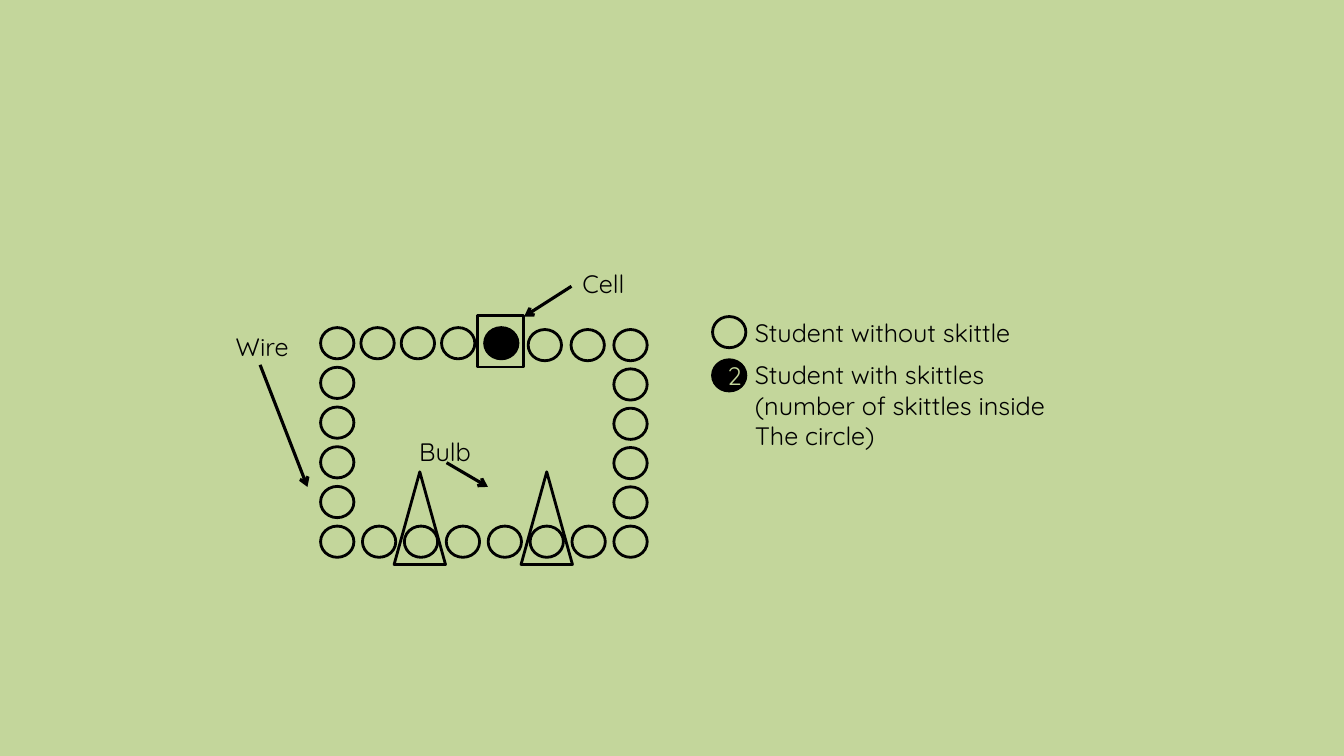
from lxml import etree
from pptx import Presentation
from pptx.dml.color import RGBColor
from pptx.enum.shapes import MSO_CONNECTOR, MSO_SHAPE
from pptx.enum.text import MSO_ANCHOR, MSO_AUTO_SIZE, PP_ALIGN
from pptx.oxml.ns import qn
from pptx.util import Pt

OVAL = MSO_SHAPE.OVAL
RECTANGLE = MSO_SHAPE.RECTANGLE
TRIANGLE = MSO_SHAPE.ISOSCELES_TRIANGLE
STRAIGHT = MSO_CONNECTOR.STRAIGHT
MIDDLE = MSO_ANCHOR.MIDDLE
GROW = MSO_AUTO_SIZE.SHAPE_TO_FIT_TEXT
CENTER = PP_ALIGN.CENTER
BLANK_LAYOUT = 6


class CircuitSlide:
    colors = {"green": "C3D69B", "black": "000000"}
    font_name = "Quicksand"
    font_size = 18
    outline_width = 2
    arrow_width = 2.25
    circle_width = 23.8
    circle_height = 22.3

    def __init__(self, deck):
        self.slide = deck.slides.add_slide(deck.slide_layouts[BLANK_LAYOUT])
        self.paint(self.slide.background.fill, "green")

    def color(self, name):
        return RGBColor.from_string(self.colors[name])

    def paint(self, fill, name):
        fill.solid()
        fill.fore_color.rgb = self.color(name)

    def set_text(self, frame, text, color="black"):
        frame.text = text
        for para in frame.paragraphs:
            for span in para.runs:
                span.font.name = self.font_name
                span.font.size = Pt(self.font_size)
                span.font.color.rgb = self.color(color)

    def shape(self, kind, left, top, width, height, fill="green"):
        shape = self.slide.shapes.add_shape(kind, Pt(left), Pt(top), Pt(width), Pt(height))
        shape.shadow.inherit = False
        self.paint(shape.fill, fill)
        shape.line.color.rgb = self.color("black")
        shape.line.width = Pt(self.outline_width)
        return shape

    def student(self, left, top, fill="green", number=None):
        circle = self.shape(OVAL, left, top, self.circle_width, self.circle_height, fill)
        if number:
            frame = circle.text_frame
            frame.vertical_anchor = MIDDLE
            self.set_text(frame, number, "green")
            frame.paragraphs[0].alignment = CENTER

    def student_line(self, start, step, count):
        for index in range(count):
            self.student(start[0] + index * step[0], start[1] + index * step[1])

    def label(self, text, left, top, width, height=28.8):
        box = self.slide.shapes.add_textbox(Pt(left), Pt(top), Pt(width), Pt(height))
        frame = box.text_frame
        frame.word_wrap = False
        frame.auto_size = GROW
        self.set_text(frame, text)

    def arrow(self, start, end):
        points = [Pt(value) for value in (*start, *end)]
        connector = self.slide.shapes.add_connector(STRAIGHT, *points)
        connector.line.color.rgb = self.color("black")
        connector.line.width = Pt(self.arrow_width)
        properties = connector._element.spPr
        line = properties.find(qn("a:ln"))
        etree.SubElement(line, qn("a:tailEnd"), type="arrow")
        etree.SubElement(properties, qn("a:effectLst"))


def main():
    deck = Presentation()
    deck.slide_width = Pt(960)
    deck.slide_height = Pt(540)
    page = CircuitSlide(deck)

    for bulb_left in (281.5, 372.2):
        page.shape(TRIANGLE, bulb_left, 337, 36.7, 66.2)

    page.shape(RECTANGLE, 341.3, 225.4, 32.4, 36.7)
    page.student(346.2, 234, "black")

    left, right, bottom = 229, 438.5, 375.8
    page.student_line((left, 234), (28.8, 0), 4)
    page.student_line((left, 262.36), (0, 28.36), 5)
    page.student_line((left + 29.93, bottom), (29.93, 0), 7)
    page.student_line((right, bottom - 28.08), (0, -28.08), 5)
    page.student_line((right - 30.6, 235.4), (-30.6, 0), 2)

    page.arrow((408.2, 204.5), (374.4, 226.1))
    page.label("Cell", 409, 187.9, 48.2)
    page.arrow((319, 330.5), (348.5, 347.8))
    page.label("Bulb", 292.3, 308.2, 51.8)
    page.arrow((185.8, 260.6), (219.6, 347.8))
    page.label("Wire", 161.3, 233.3, 52.6)

    page.student(509, 226.1)
    page.label("Student without skittle", 532.1, 223.2, 205.9)
    page.student(509, 257, "black", "2")
    page.label(
        "Student with skittles\n(number of skittles inside\nThe circle)",
        532.1, 253.4, 237.6, 72.7,
    )

    deck.save("out.pptx")


if __name__ == "__main__":
    main()
